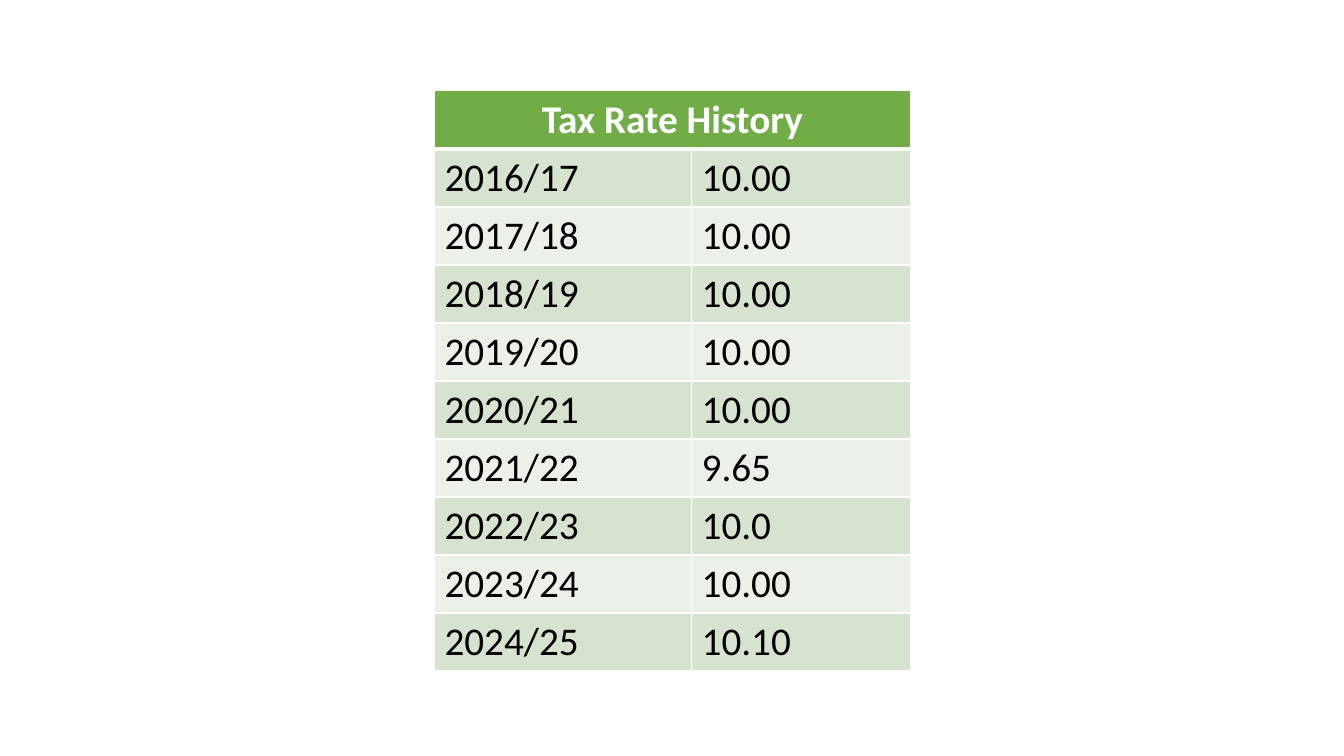
from lxml.etree import SubElement
from pptx import Presentation
from pptx.dml.color import RGBColor
from pptx.enum.text import PP_ALIGN
from pptx.oxml.ns import qn
from pptx.util import Cm, Pt

COLORS = {"header": "70AD47", "odd": "D5E3CF", "even": "EBF1E9",
          "white": "FFFFFF", "black": "000000"}
TAX_RATES = [
    ("2016/17", "10.00"),
    ("2017/18", "10.00"),
    ("2018/19", "10.00"),
    ("2019/20", "10.00"),
    ("2020/21", "10.00"),
    ("2021/22", "9.65"),
    ("2022/23", "10.0"),
    ("2023/24", "10.00"),
    ("2024/25", "10.10"),
]


def add_borders(cell, top, bottom):
    """Draw white lines round a cell; widths are in points."""
    properties = cell._tc.get_or_add_tcPr()
    for side, width in (("L", 1), ("R", 1), ("T", top), ("B", bottom)):
        line = SubElement(properties, qn(f"a:ln{side}"), w=str(Pt(width)))
        line_fill = SubElement(line, qn("a:solidFill"))
        SubElement(line_fill, qn("a:srgbClr"), val=COLORS["white"])


def style_cell(cell, text, fill, color, bold=False):
    cell.text_frame.text = text
    cell.fill.solid()
    cell.fill.fore_color.rgb = RGBColor.from_string(COLORS[fill])
    for run in cell.text_frame.paragraphs[0].runs:
        run.font.name = "Calibri"
        run.font.size = Pt(28)
        run.font.bold = bold
        run.font.color.rgb = RGBColor.from_string(COLORS[color])


prs = Presentation()
prs.slide_width, prs.slide_height = Cm(33.87), Cm(19.05)
slide = prs.slides.add_slide(prs.slide_layouts[6])

# Table frame
history = slide.shapes.add_table(
    len(TAX_RATES) + 1, 2, Cm(10.95), Cm(2.29), Cm(11.99), Cm(14.4)).table
history.columns[0].width = Cm(6.48)
history.columns[1].width = Cm(5.51)

# Borders, with a thick line below the header
for row_index, row in enumerate(history.rows):
    for cell in row.cells:
        add_borders(cell, top=3 if row_index == 1 else 1,
                    bottom=3 if row_index == 0 else 1)

# Header across both columns
header = history.cell(0, 0)
header.merge(history.cell(0, 1))
style_cell(header, "Tax Rate History", "header", "white", bold=True)
header.text_frame.paragraphs[0].alignment = PP_ALIGN.CENTER

# Banded rows of years and rates
for row_index, year_and_rate in enumerate(TAX_RATES, start=1):
    band = "odd" if row_index % 2 else "even"
    for column, text in enumerate(year_and_rate):
        style_cell(history.cell(row_index, column), text, band, "black")

prs.save("out.pptx")
